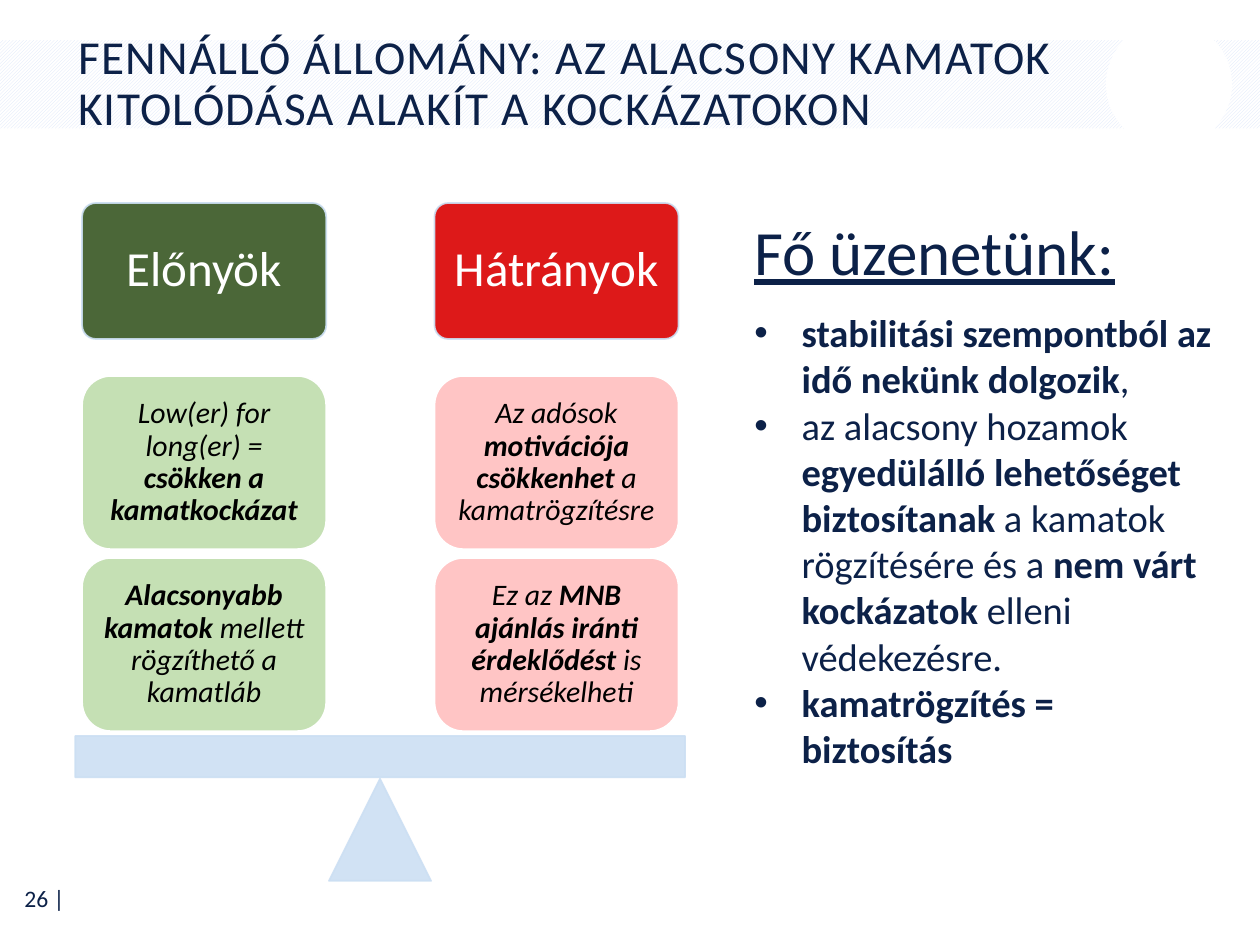
from lxml import etree
from pptx import Presentation
from pptx.dml.color import RGBColor
from pptx.enum import dml, shapes, text
from pptx.oxml.ns import qn
from pptx.util import Pt

NAVY = RGBColor(0x0C, 0x21, 0x48)
WHITE = RGBColor(0xFF, 0xFF, 0xFF)
BLACK = RGBColor(0, 0, 0)
STRIPE = RGBColor(0xDA, 0xE5, 0xF9)
PALE_BLUE = RGBColor(0xCC, 0xDF, 0xF3)
DARK_GREEN = RGBColor(0x38, 0x57, 0x23)
LIGHT_GREEN = RGBColor(0xC5, 0xE0, 0xB4)
RED = RGBColor(0xDA, 0, 0)
PINK = RGBColor(0xFF, 0xC5, 0xC5)

FONT = "Calibri"
SHAPE = shapes.MSO_SHAPE
ALIGN = text.PP_ALIGN
CARD_TOP, CARD_PITCH = 214.8, 104

COLUMNS = [
    (46.9, "Előnyök", DARK_GREEN, LIGHT_GREEN, [
        [("Low(er) for long(er) = ", False), ("csökken a kamatkockázat", True)],
        [("Alacsonyabb kamatok", True), (" mellett rögzíthető a kamatláb", False)],
    ]),
    (248.3, "Hátrányok", RED, PINK, [
        [("Az adósok ", False), ("motivációja csökkenhet ", True),
         ("a kamatrögzítésre", False)],
        [("Ez az ", False), ("MNB ajánlás iránti érdeklődést ", True),
         ("is mérsékelheti", False)],
    ]),
]

MESSAGES = [
    [("stabilitási szempontból az idő nekünk dolgozik", True), (",", False)],
    [("az alacsony hozamok ", False),
     ("egyedülálló lehetőséget biztosítanak", True),
     (" a kamatok rögzítésére és a ", False),
     ("nem várt kockázatok", True), (" elleni védekezésre.", False)],
    [("kamatrögzítés = biztosítás", True)],
]


def add_span(para, words, size, color, bold=False, italic=False, underline=False):
    span = para.add_run()
    span.text = words
    font = span.font
    font.name, font.size, font.color.rgb = FONT, Pt(size), color
    font.bold, font.italic, font.underline = bold, italic, underline
    return span


def set_opacity(fill_parent, percent):
    color = fill_parent.find(qn("a:solidFill"))[0]
    etree.SubElement(color, qn("a:alpha"), val=str(percent * 1000))


def add_plain_shape(page, kind, place, color, line_color=None, opacity=100):
    shape = page.shapes.add_shape(kind, *map(Pt, place))
    shape.shadow.inherit = False
    shape.fill.solid()
    shape.fill.fore_color.rgb = color
    if line_color is None:
        shape.line.fill.background()
    else:
        shape.line.color.rgb = line_color
        shape.line.width = Pt(1)
    if opacity < 100:
        properties = shape.fill._xPr
        set_opacity(properties, opacity)
        set_opacity(properties.find(qn("a:ln")), opacity)
    return shape


def fill_card(shape, spans, size, color, inset, italic=False):
    frame = shape.text_frame
    frame.word_wrap = True
    frame.vertical_anchor = text.MSO_ANCHOR.MIDDLE
    frame.margin_left = frame.margin_right = Pt(inset)
    frame.margin_top = frame.margin_bottom = Pt(inset)
    para = frame.paragraphs[0]
    para.alignment = ALIGN.CENTER
    para.line_spacing = 0.9
    for words, bold in spans:
        add_span(para, words, size, color, bold, italic)


def add_column(page, left, heading, dark, light, cards):
    header = add_plain_shape(page, SHAPE.ROUNDED_RECTANGLE,
                             (left, 116, 139.5, 77.7), dark, PALE_BLUE, 90)
    header.adjustments[0] = 0.1
    fill_card(header, [(heading, False)], 28, WHITE, 8.4)
    for row, spans in enumerate(cards):
        place = (left, CARD_TOP + row * CARD_PITCH, 139.5, 99)
        card = add_plain_shape(page, SHAPE.ROUNDED_RECTANGLE, place, light, WHITE)
        fill_card(card, spans, 17, BLACK, 5, italic=True)


def add_band(page):
    band = add_plain_shape(page, SHAPE.RECTANGLE, (0, 23, 720, 50.4), WHITE)
    band.fill.patterned()
    band.fill.pattern = dml.MSO_PATTERN.LIGHT_UPWARD_DIAGONAL
    band.fill.fore_color.rgb = STRIPE
    band.fill.back_color.rgb = WHITE
    add_plain_shape(page, SHAPE.OVAL, (632, 12.2, 72, 72), WHITE)


def add_title(page, words):
    title = page.shapes.title
    title.element.getparent().append(title.element)
    title.left, title.top, title.width, title.height = map(Pt, (37.4, 24.5, 599, 48))
    frame = title.text_frame
    frame.word_wrap = True
    frame.auto_size = text.MSO_AUTO_SIZE.NONE
    frame.vertical_anchor = text.MSO_ANCHOR.MIDDLE
    para = frame.paragraphs[0]
    para.alignment = ALIGN.LEFT
    para.line_spacing = 0.9
    span = add_span(para, words, 27, NAVY)
    span.font._element.set("spc", "80")


def add_text_box(page, place):
    box = page.shapes.add_textbox(*map(Pt, place))
    box.text_frame.word_wrap = True
    return box.text_frame


def add_bullet(para, indent):
    properties = para._p.get_or_add_pPr()
    properties.set("marL", str(Pt(indent)))
    properties.set("indent", str(-Pt(indent)))
    etree.SubElement(properties, qn("a:buFont"), typeface="Arial")
    etree.SubElement(properties, qn("a:buChar"), char="•")


def add_messages(page):
    frame = add_text_box(page, (424, 118, 276.5, 330))
    heading = frame.paragraphs[0]
    heading.space_after = Pt(12)
    add_span(heading, "Fő üzenetünk:", 36, NAVY, underline=True)
    for spans in MESSAGES:
        para = frame.add_paragraph()
        add_bullet(para, 27)
        for words, bold in spans:
            add_span(para, words, 22, NAVY, bold)


def add_page_number(page):
    frame = add_text_box(page, (0.7, 499.7, 43.2, 26.6))
    frame.vertical_anchor = text.MSO_ANCHOR.MIDDLE
    para = frame.paragraphs[0]
    para.alignment = ALIGN.RIGHT
    add_span(para, "26 |", 13.5, NAVY)


def main():
    deck = Presentation()
    deck.slide_width, deck.slide_height = Pt(720), Pt(540)
    page = deck.slides.add_slide(deck.slide_layouts[5])
    add_page_number(page)
    add_band(page)
    add_title(page, "FENNÁLLÓ ÁLLOMÁNY: AZ ALACSONY KAMATOK "
                    "KITOLÓDÁSA ALAKÍT A KOCKÁZATOKON")
    for column in COLUMNS:
        add_column(page, *column)
    add_plain_shape(page, SHAPE.ISOSCELES_TRIANGLE, (188, 445, 58.3, 58.3),
                    PALE_BLUE, PALE_BLUE, 90)
    add_plain_shape(page, SHAPE.RECTANGLE, (43, 420.6, 348.5, 23.6),
                    PALE_BLUE, PALE_BLUE, 90)
    add_messages(page)
    deck.save("out.pptx")


if __name__ == "__main__":
    main()
